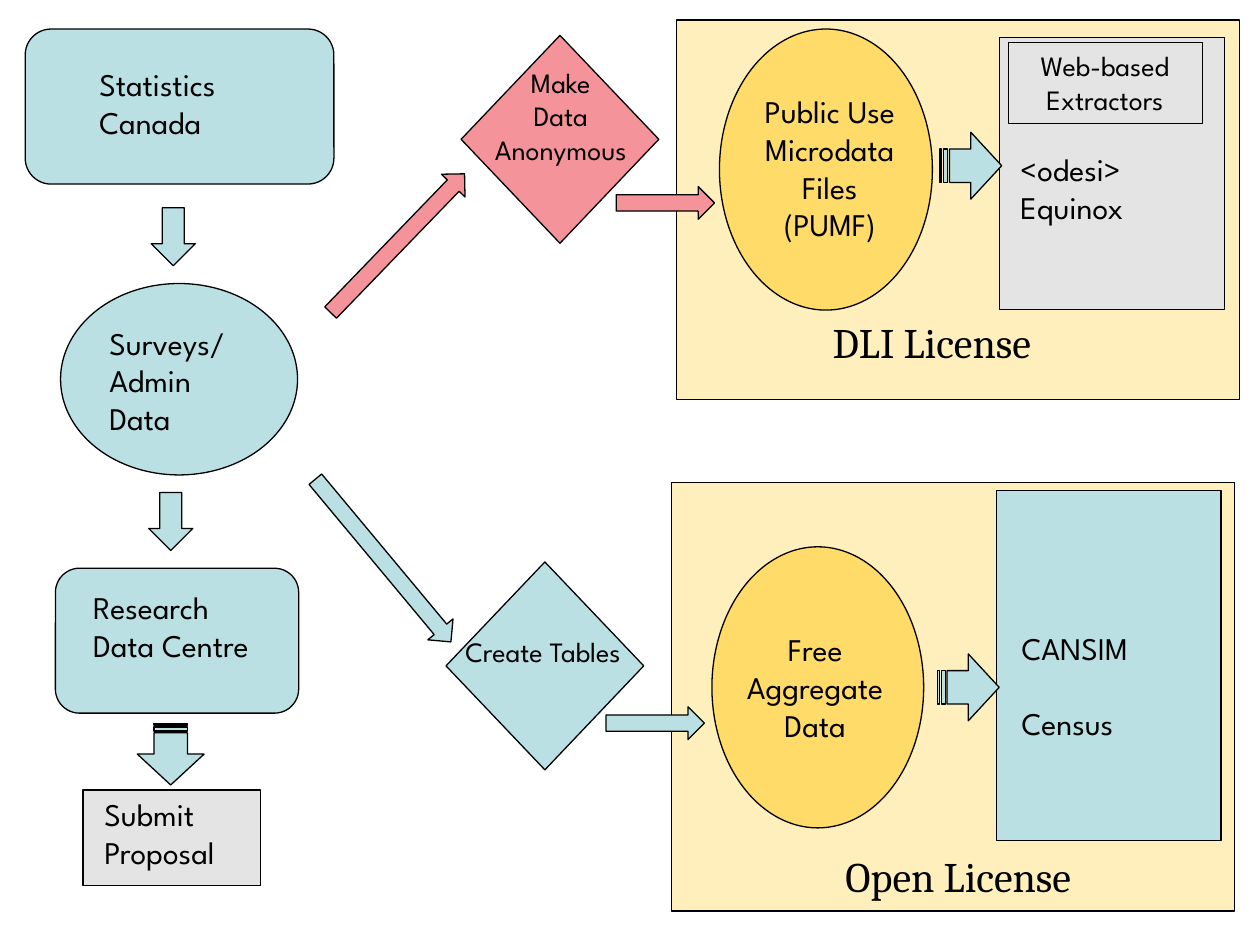
from pptx import Presentation
from pptx.dml.color import RGBColor
from pptx.enum.shapes import MSO_SHAPE
from pptx.enum.text import MSO_ANCHOR, PP_ALIGN
from pptx.util import Pt

RECTANGLE = MSO_SHAPE.RECTANGLE
ROUNDED = MSO_SHAPE.ROUNDED_RECTANGLE
ELLIPSE = MSO_SHAPE.OVAL
DIAMOND = MSO_SHAPE.DIAMOND
DOWN_ARROW = MSO_SHAPE.DOWN_ARROW
RIGHT_ARROW = MSO_SHAPE.RIGHT_ARROW
STRIPED_ARROW = MSO_SHAPE.STRIPED_RIGHT_ARROW
LEFT, CENTER = PP_ALIGN.LEFT, PP_ALIGN.CENTER
TOP = MSO_ANCHOR.TOP

BLACK, TEAL, PINK, GREY = "000000", "BBE0E3", "F5939A", "E4E4E4"
CREAM, GOLD = "FFEFBD", "FFDB69"
SANS, SERIF = "League Spartan", "Cambria"


def color(hex_text):
    """Return the colour for a hex string."""
    return RGBColor.from_string(hex_text)


def add_figure(page, kind, left, top, width, height, fill=TEAL, line=0.75, rotation=0):
    """Draw a preset shape with a black outline; no fill when fill is None."""
    figure = page.shapes.add_shape(kind, Pt(left), Pt(top), Pt(width), Pt(height))
    figure.shadow.inherit = False
    figure.rotation = rotation
    if fill:
        figure.fill.solid()
        figure.fill.fore_color.rgb = color(fill)
    else:
        figure.fill.background()
    figure.line.color.rgb = color(BLACK)
    figure.line.width = Pt(line)
    return figure


def write_text(box, text, size=18, font=SANS, align=LEFT, gap=0):
    """Fill a box with one paragraph per line of text, with a gap between them."""
    frame = box.text_frame
    frame.word_wrap = True
    frame.vertical_anchor = TOP
    for index, line in enumerate(text.split("\n")):
        para = frame.add_paragraph() if index else frame.paragraphs[0]
        para.alignment = align
        if index and gap:
            para.space_before = Pt(gap)
        span = para.add_run()
        span.text = line
        span.font.size = Pt(size)
        span.font.name = font
        span.font.color.rgb = color(BLACK)


def add_label(page, text, left, top, width, height, **text_format):
    """Place a text box and write in it."""
    box = page.shapes.add_textbox(Pt(left), Pt(top), Pt(width), Pt(height))
    write_text(box, text, **text_format)


def add_panels(page):
    """Draw the two license areas with their product boxes."""
    add_figure(page, RECTANGLE, 383.8, 275.8, 321.8, 244.8, CREAM)
    add_figure(page, RECTANGLE, 386.6, 11.5, 321.8, 216.7, CREAM)
    add_figure(page, RECTANGLE, 569.5, 280.1, 128.2, 200.2)
    add_figure(page, RECTANGLE, 571, 21.6, 128.9, 155.5, GREY)
    extractors = add_figure(page, RECTANGLE, 576, 24.5, 110.9, 46.1, None, line=0.5)
    write_text(extractors, "Web-based Extractors", size=16, align=CENTER)


def add_stages(page):
    """Draw the sources, decisions and data sets."""
    add_figure(page, ROUNDED, 14.4, 16.6, 176.4, 88.6)
    add_figure(page, ELLIPSE, 34.6, 162, 135.4, 109.4)
    add_figure(page, ROUNDED, 31.7, 324.7, 139, 82.8)
    add_figure(page, RECTANGLE, 47.5, 451.4, 101.5, 54.7, GREY)
    add_figure(page, DIAMOND, 263.5, 20.2, 113, 118.8, PINK)
    add_figure(page, DIAMOND, 254.9, 321.1, 113, 118.8)
    add_figure(page, ELLIPSE, 411.1, 16.6, 121.7, 160.6, GOLD)
    add_figure(page, ELLIPSE, 406.8, 312.5, 121, 160.6, GOLD)


def add_arrows(page):
    """Draw the arrows that join the stages."""
    for left, top in ((86.4, 118.8), (85, 281.5)):
        add_figure(page, DOWN_ARROW, left, top, 25.2, 33.1)
    for left, top, rotation in ((537.1, 75.6, 0), (535.7, 373.7, 0), (79.9, 411.8, 90)):
        add_figure(page, STRIPED_ARROW, left, top, 35.3, 38.2, rotation=rotation)
    for left, top, width, fill, rotation in (
        (352.1, 106.6, 56.2, PINK, 0),
        (346.3, 403.9, 56.2, TEAL, 0),
        (158.4, 311, 121, TEAL, 50.2),
        (172.1, 129.6, 110.2, PINK, 314),
    ):
        add_figure(page, RIGHT_ARROW, left, top, width, 18.7, fill, rotation=rotation)


def add_labels(page):
    """Write the labels over the stages and panels."""
    add_label(page, "Statistics\nCanada", 49.7, 33.8, 110.9, 51.1)
    add_label(page, "Surveys/ Admin Data", 55.4, 181.4, 93.6, 72.7)
    add_label(page, "Research Data Centre", 46.1, 332.6, 110.9, 72.7)
    add_label(page, "Submit Proposal", 52.6, 450.7, 89.3, 51.1)
    add_label(page, "Make\nData\nAnonymous", 265, 33.8, 110.9, 65.5, size=16, align=CENTER)
    add_label(page, "Create Tables", 254.9, 359.3, 110.9, 46.1, size=16, align=CENTER)
    add_label(page, "Public Use Microdata Files\n(PUMF)", 416.2, 49, 115.9, 94.3, align=CENTER)
    add_label(page, "Free\nAggregate Data", 403.9, 356.4, 123.8, 72.7, align=CENTER)
    add_label(page, "<odesi>\nEquinox", 576, 82.1, 110.9, 51.1)
    add_label(page, "CANSIM\nCensus", 576.7, 355.7, 110.9, 72.7, gap=21.7)
    for text, left, top in (("DLI License", 452.9, 177.1), ("Open License", 468, 482.4)):
        add_label(page, text, left, top, 159.1, 36, size=24, font=SERIF, align=CENTER)


def main():
    """Build the data access diagram and save it."""
    deck = Presentation()
    deck.slide_width, deck.slide_height = Pt(720), Pt(540)
    page = deck.slides.add_slide(deck.slide_layouts[6])
    add_panels(page)
    add_stages(page)
    add_arrows(page)
    add_labels(page)
    deck.save("out.pptx")


if __name__ == "__main__":
    main()
